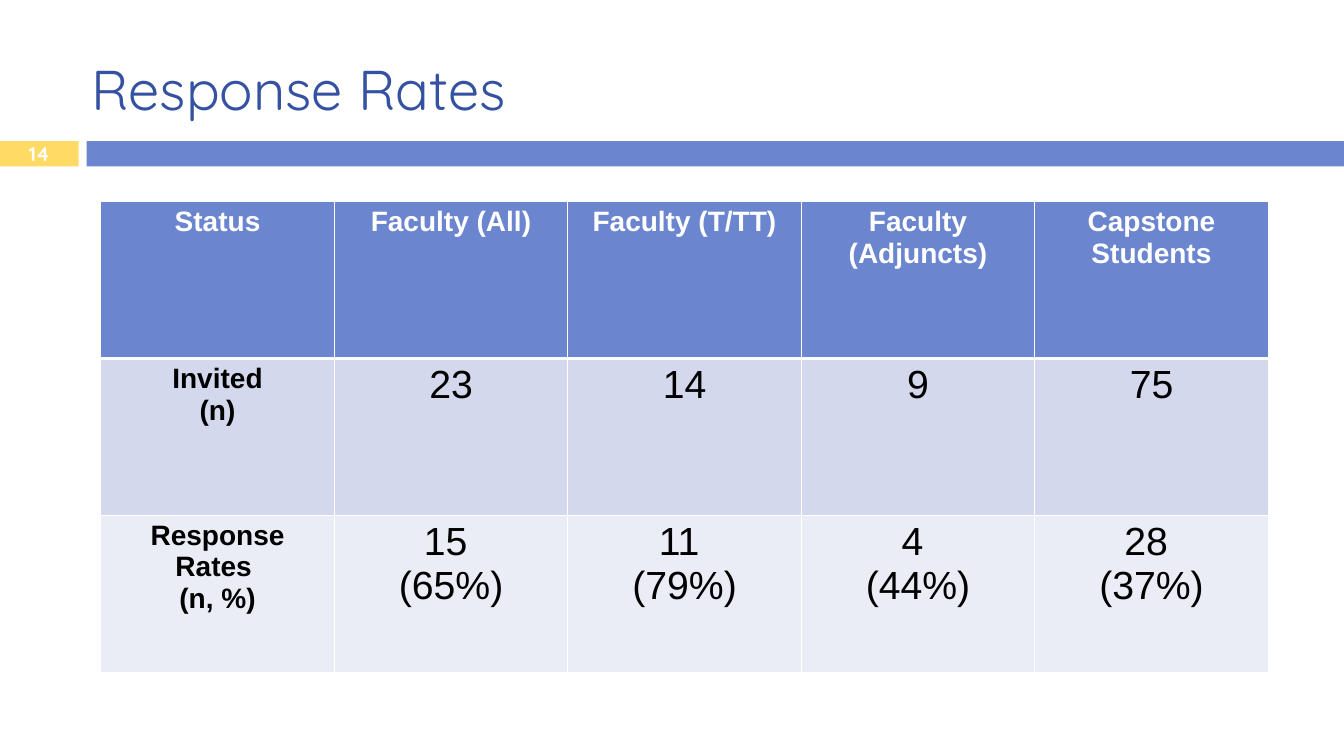
from lxml.etree import SubElement as Sub
from pptx import Presentation
from pptx.dml.color import RGBColor as RGB
from pptx.enum.shapes import MSO_SHAPE as SHAPE
from pptx.enum.text import MSO_ANCHOR as ANCHOR, PP_ALIGN as ALIGN
from pptx.oxml.ns import qn
from pptx.util import Inches, Pt

WIDE, HIGH = 13.33, 7.5
BLUE, GOLD, NAVY, WHITE, BLACK = "6B85CF", "FFDA65", "3451A2", "FFFFFF", "000000"
BANDS = [BLUE, "D3D8ED", "EAEDF6"]
ROWS = [
    ["Status", "Faculty (All)", "Faculty (T/TT)", "Faculty (Adjuncts)", "Capstone Students"],
    ["Invited\n(n)", "23", "14", "9", "75"],
    ["Response Rates \n(n, %)", "15 \n(65%)", "11 \n(79%)", "4 \n(44%)", "28 \n(37%)"],
]


def paint(fill, color):
    fill.solid()
    fill.fore_color.rgb = RGB.from_string(color)


def write(frame, text, size=20, font="Arial", color=BLACK, bold=False, align=ALIGN.CENTER):
    """Fill a text frame, one paragraph for each line."""
    frame.word_wrap = True
    for i, line in enumerate(text.split("\n")):
        para = frame.add_paragraph() if i else frame.paragraphs[0]
        para.alignment = align
        run = para.add_run()
        run.text = line
        run.font.size, run.font.name, run.font.bold = Pt(size), font, bold
        run.font.color.rgb = RGB.from_string(color)


def label(slide, box, text, **style):
    frame = slide.shapes.add_textbox(*map(Inches, box)).text_frame
    frame.vertical_anchor = ANCHOR.MIDDLE
    write(frame, text, font="Quicksand", **style)


def block(slide, box, color):
    shape = slide.shapes.add_shape(SHAPE.RECTANGLE, *map(Inches, box))
    shape.shadow.inherit = False
    paint(shape.fill, color)
    shape.line.fill.background()


def edge(cell, **widths):
    """Draw white cell borders, with widths in points by side."""
    props = cell._tc.get_or_add_tcPr()
    for side, width in widths.items():
        line = Sub(props, qn(f"a:ln{side}"), w=str(Pt(width)))
        Sub(Sub(line, qn("a:solidFill")), qn("a:srgbClr"), val=WHITE)


def header(slide, x, y, w, h):
    """Title above a ribbon that starts with the page number."""
    tab, gap, bar = 0.78, 0.08, 0.25
    top = y + h - bar
    block(slide, (x, top, tab, bar), GOLD)
    block(slide, (x + tab + gap, top, w - tab - gap, bar), BLUE)
    label(slide, (x + 0.81, y, 8.62, 0.84), "Response Rates",
          size=40, color=NAVY, align=ALIGN.LEFT)
    label(slide, (x, top - 0.01, tab, bar + 0.02), "14", size=14, color=WHITE, bold=True)


def rates(slide, x, y, w, h):
    table = slide.shapes.add_table(len(ROWS), len(ROWS[0]), *map(Inches, (x, y, w, h))).table
    for col in table.columns:
        col.width = Inches(w / len(ROWS[0]))
    for r, row in enumerate(ROWS):
        table.rows[r].height = Inches(h / len(ROWS))
        for c, text in enumerate(row):
            cell = table.cell(r, c)
            edge(cell, L=1, R=1, T=3 if r == 1 else 1, B=3 if r == 0 else 1)
            paint(cell.fill, BANDS[r])
            head = r == 0 or c == 0
            write(cell.text_frame, text, size=20 if head else 28, bold=head,
                  color=BLACK if r else WHITE)


def main():
    deck = Presentation()
    deck.slide_width, deck.slide_height = Inches(WIDE), Inches(HIGH)
    slide = deck.slides.add_slide(deck.slide_layouts[6])
    header(slide, 0, 0.45, WIDE, 1.2)
    rates(slide, 1, 2, 11.58, 4.67)
    deck.save("out.pptx")


if __name__ == "__main__":
    main()
